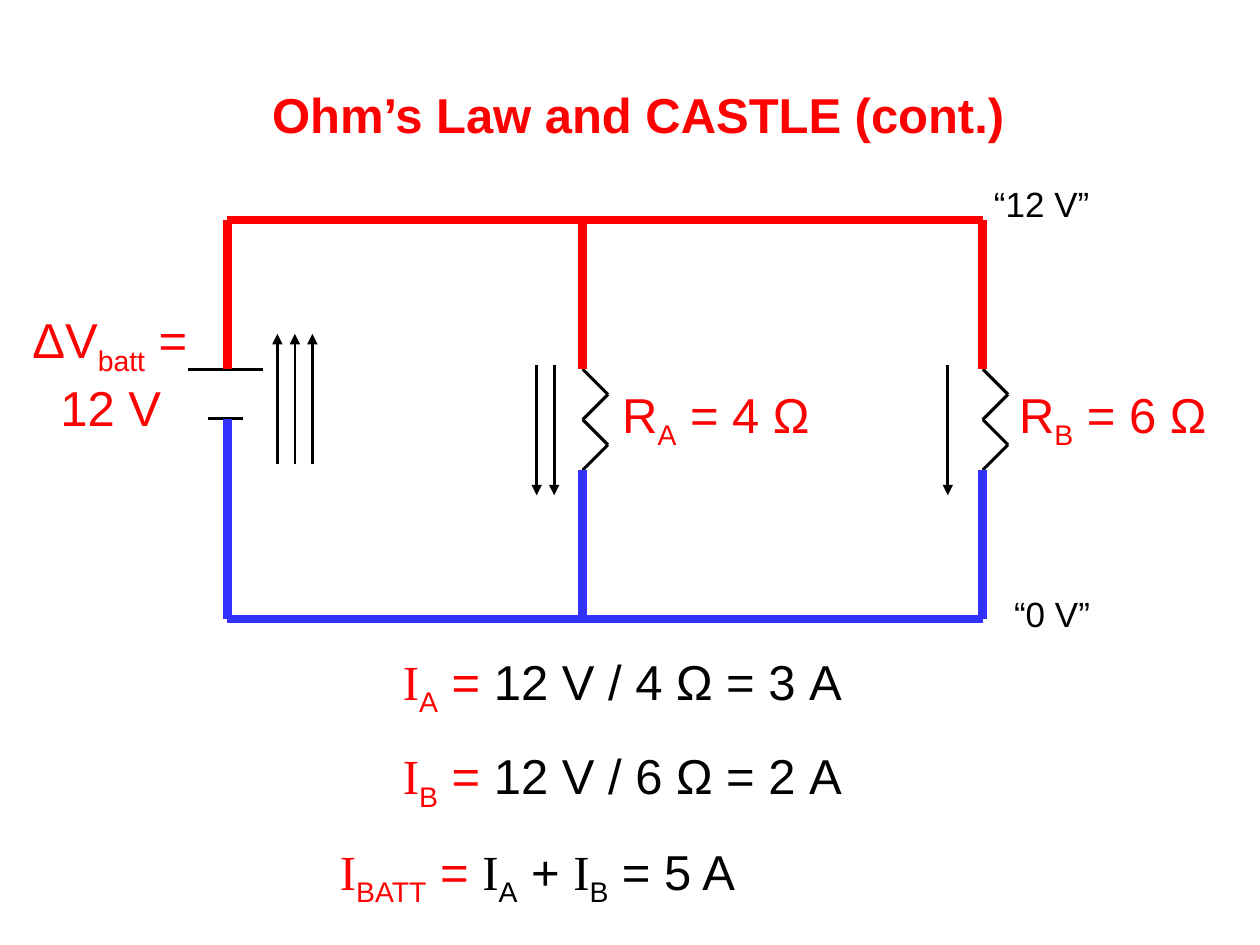
from itertools import pairwise

from lxml import etree
from pptx import Presentation
from pptx.dml.color import RGBColor
from pptx.enum.shapes import MSO_CONNECTOR
from pptx.enum.text import MSO_ANCHOR, MSO_AUTO_SIZE, PP_ALIGN
from pptx.oxml.ns import qn
from pptx.util import Pt

STRAIGHT = MSO_CONNECTOR.STRAIGHT
TOP, MIDDLE = MSO_ANCHOR.TOP, MSO_ANCHOR.MIDDLE
FIT_SHAPE = MSO_AUTO_SIZE.SHAPE_TO_FIT_TEXT
LEFT = PP_ALIGN.LEFT

RED, BLUE, BLACK = "FF0000", "3333FF", "000000"
SANS, SERIF = "Arial", "Times New Roman"

# Content: spans are (text, colour, font, is subscript)
TITLE = "Ohm’s Law and CASTLE (cont.)"
TITLE_BOX = (148.3, 44.6, 434.9, 41)


def plain(text, colour=RED):
    return (text, colour, SANS, False)


def symbol(letter, index, colour=RED, font=SANS):
    return [(letter, colour, font, False), (index, colour, SANS, True)]


def current(index, colour=RED):
    return symbol("I", index, colour, SERIF)


# (left, top, width, height), size, anchor, spans
LABELS = [
    ((560.9, 100.8, 69.1, 31), 20, TOP, [plain("“12 V”", BLACK)]),
    ((572.4, 334.8, 57.6, 31), 20, TOP, [plain("“0 V”", BLACK)]),
    ((11.5, 173.5, 105.8, 41), 28, TOP, symbol("ΔV", "batt") + [plain(" =")]),
    ((27.4, 212.4, 72, 41), 28, TOP, [plain("12 V")]),
    ((348.5, 218.2, 131.8, 41), 28, MIDDLE, symbol("R", "A") + [plain(" = 4 Ω")]),
    ((575.3, 218.2, 131.8, 41), 28, MIDDLE, symbol("R", "B") + [plain(" = 6 Ω")]),
    ((223.2, 370.8, 275.8, 41), 28, MIDDLE,
     current("A") + [plain(" ="), plain(" 12 V / 4 Ω = 3 A", BLACK)]),
    ((223.2, 424.8, 275.8, 41), 28, MIDDLE,
     current("B") + [plain(" ="), plain(" 12 V / 6 Ω = 2 A", BLACK)]),
    ((187.2, 479.5, 262.1, 41), 28, MIDDLE,
     current("BATT") + [plain(" = ")] + current("A", BLACK)
     + [plain(" + ", BLACK)] + current("B", BLACK) + [plain(" = 5 A", BLACK)]),
]

# Circuit geometry
BATTERY_X, BRANCH_A_X, BRANCH_B_X = 129.8, 333, 561.6
COLUMNS = (BATTERY_X, BRANCH_A_X, BRANCH_B_X)
TOP_Y, BOTTOM_Y = 125.8, 353.7
UPPER_Y, LOWER_Y = 211, 268.6        # resistor ends
CELL_Y = 239.4                       # lower battery plate
ZIGZAG = 14.4
PLATES = [(UPPER_Y, 107.3, 150.5), (CELL_Y, 118.8, 138.9)]
ARROW_LENGTH, ARROW_GAP = 74.2, 10
# first x, number of arrows, tail y, direction
ARROWS = [(158.5, 3, 265, -1), (306.7, 2, 208.8, 1), (541.6, 1, 208.8, 1)]


def color(value):
    return RGBColor.from_string(value)


def add_line(shapes, start, end, line_color, width, arrow=False):
    line = shapes.add_connector(STRAIGHT, *(Pt(v) for v in (*start, *end)))
    line.line.color.rgb = color(line_color)
    line.line.width = Pt(width)
    properties = line._element.spPr
    if arrow:
        outline = properties.find(qn("a:ln"))
        etree.SubElement(outline, qn("a:tailEnd"), type="triangle")
    etree.SubElement(properties, qn("a:effectLst"))


def place(shape, box):
    shape.left, shape.top, shape.width, shape.height = (Pt(v) for v in box)


def fill_text(shape, spans, size, anchor, bold=False):
    frame = shape.text_frame
    frame.word_wrap = False
    frame.auto_size = FIT_SHAPE
    frame.vertical_anchor = anchor
    paragraph = frame.paragraphs[0]
    paragraph.alignment = LEFT
    for text, text_color, font, subscript in spans:
        span = paragraph.add_run()
        span.text = text
        span.font.size = Pt(size)
        span.font.name = font
        span.font.bold = bold
        span.font.color.rgb = color(text_color)
        if subscript:
            span._r.get_or_add_rPr().set("baseline", "-25000")


deck = Presentation()
deck.slide_width, deck.slide_height = Pt(720), Pt(540)
page = deck.slides.add_slide(deck.slide_layouts[5])
shapes = page.shapes

# Title
place(shapes.title, TITLE_BOX)
fill_text(shapes.title, [plain(TITLE)], 28, MIDDLE, bold=True)

# Resistors
for x in (BRANCH_A_X, BRANCH_B_X):
    resistor = shapes.add_group_shape().shapes
    corners = [(x + ZIGZAG * (step % 2), UPPER_Y + ZIGZAG * step) for step in range(5)]
    for start, end in pairwise(corners):
        add_line(resistor, start, end, BLACK, 1.75)

# Battery plates
for y, left, right in PLATES:
    add_line(shapes, (left, y), (right, y), BLACK, 1.75)

# Wires at 12 V and at 0 V
for wire_color, rail_y, ends in (
    (RED, TOP_Y, (UPPER_Y, UPPER_Y, UPPER_Y)),
    (BLUE, BOTTOM_Y, (CELL_Y, LOWER_Y, LOWER_Y)),
):
    wires = shapes.add_group_shape().shapes
    add_line(wires, (BATTERY_X, rail_y), (BRANCH_B_X, rail_y), wire_color, 5)
    for x, y in zip(COLUMNS, ends):
        add_line(wires, (x, rail_y), (x, y), wire_color, 5)

# Current arrows
for first_x, count, y, direction in ARROWS:
    arrows = shapes.add_group_shape().shapes
    for number in range(count):
        x = first_x + number * ARROW_GAP
        add_line(arrows, (x, y), (x, y + direction * ARROW_LENGTH), BLACK, 1.5, arrow=True)

# Labels and equations
for box, size, anchor, spans in LABELS:
    fill_text(shapes.add_textbox(*(Pt(v) for v in box)), spans, size, anchor)

deck.save("out.pptx")
